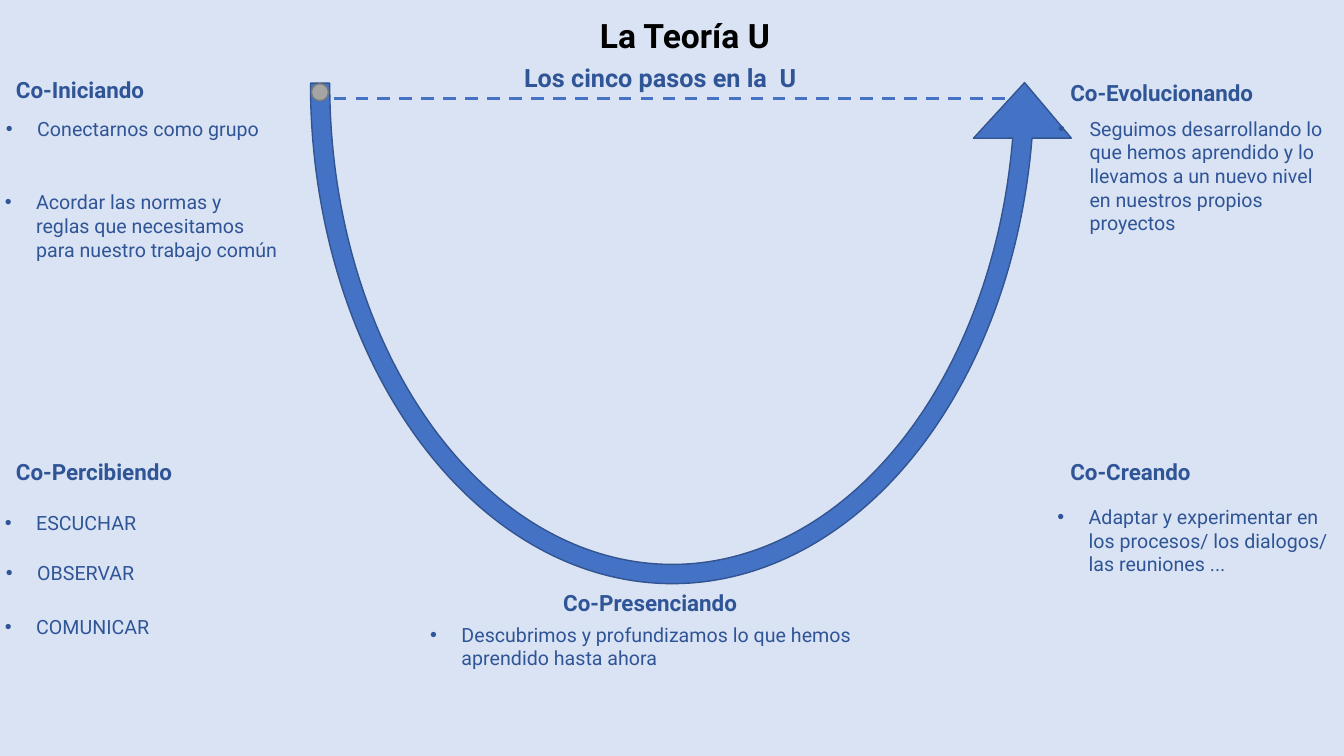
from dataclasses import dataclass

from lxml import etree
from pptx import Presentation
from pptx import util as u
from pptx.dml.color import RGBColor
from pptx.enum import dml, shapes, text
from pptx.oxml import ns

WIDTH, HEIGHT = 13.33, 7.5
FONT = "Roboto"
SKY, BLUE, NAVY, EDGE = "DAE3F3", "4472C4", "2F5597", "325491"
GREY, GREY_EDGE, BLACK = "A5A5A5", "7A7A7A", "000000"
INDENT = 2.33


@dataclass(frozen=True)
class Area:
    left: float
    top: float
    width: float
    height: float


@dataclass(frozen=True)
class Step:
    words: str
    area: Area


HEADINGS = [
    Step("Co-Iniciando", Area(0.45, 9.47, 17.18, 4.93)),
    Step("Co-Percibiendo", Area(0.45, 60, 19.5, 4.93)),
    Step("Co-Presenciando", Area(41.17, 77.33, 19.5, 4.93)),
    Step("Co-Creando", Area(78.9, 60, 14.4, 4.93)),
    Step("Co-Evolucionando", Area(78.9, 9.87, 19.8, 4.93)),
]

BULLETS = [
    Step("Conectarnos como grupo", Area(-0.3, 14.8, 21.83, 7.6)),
    Step("Acordar las normas y reglas que necesitamos para nuestro trabajo común",
         Area(-0.38, 24.53, 21.83, 17.07)),
    Step("ESCUCHAR", Area(-0.38, 66.93, 28.73, 4.53)),
    Step("COMUNICAR", Area(-0.38, 80.67, 26.55, 4.53)),
    Step("OBSERVAR", Area(-0.3, 73.6, 30.45, 4.53)),
    Step("Descubrimos y profundizamos lo que hemos aprendido hasta ahora",
         Area(31.27, 81.73, 37.5, 7.6)),
    Step("Adaptar y experimentar en los procesos/ los dialogos/ las reuniones ...",
         Area(77.93, 66.13, 21.83, 17.07)),
    Step("Seguimos desarrollando lo que hemos aprendido y lo llevamos a un nuevo "
         "nivel en nuestros propios proyectos", Area(78, 14.8, 21.83, 20.13)),
]


def across(share: float) -> u.Length:
    return u.Inches(WIDTH * share / 100)


def down(share: float) -> u.Length:
    return u.Inches(HEIGHT * share / 100)


def place(area: Area) -> tuple:
    return across(area.left), down(area.top), across(area.width), down(area.height)


def colour(code: str) -> RGBColor:
    return RGBColor.from_string(code)


def add_bullet(para) -> None:
    props = para._p.get_or_add_pPr()
    props.set("marL", str(across(INDENT)))
    props.set("indent", str(-across(INDENT)))
    etree.SubElement(props, ns.qn("a:buFont")).set("typeface", "Arial")
    etree.SubElement(props, ns.qn("a:buChar")).set("char", "•")


def add_text(page, words: str, area: Area, *, size: float, ink: str = NAVY,
             bold: bool = False, bullet: bool = False, centred: bool = False) -> None:
    box = page.shapes.add_textbox(*place(area))
    frame = box.text_frame
    frame.word_wrap = True
    frame.auto_size = text.MSO_AUTO_SIZE.SHAPE_TO_FIT_TEXT
    para = frame.paragraphs[0]
    if centred:
        para.alignment = text.PP_ALIGN.CENTER
    if bullet:
        add_bullet(para)
    span = para.add_run()
    span.text = words
    span.font.name = FONT
    span.font.size = u.Pt(size)
    span.font.bold = bold
    span.font.color.rgb = colour(ink)


def add_figure(page, kind, area: Area, *, fill: str, edge: str):
    figure = page.shapes.add_shape(kind, *place(area))
    figure.shadow.inherit = False
    figure.fill.solid()
    figure.fill.fore_color.rgb = colour(fill)
    figure.line.color.rgb = colour(edge)
    figure.line.width = u.Pt(1)
    return figure


def add_u_arrow(page) -> None:
    arrow = add_figure(page, shapes.MSO_SHAPE.CIRCULAR_ARROW,
                       Area(20.17, -60.4, 59.7, 142.8), fill=BLUE, edge=EDGE)
    thickness, head_width = 2.4 / 100, 6.1 / 100
    head, end, start = (degrees * 0.6 for degrees in (9.03, 351.07, 180))
    for index, value in enumerate((thickness, head, end, start, head_width)):
        arrow.adjustments[index] = value
    arrow.rotation = 180
    arrow.element.spPr.find(ns.qn("a:xfrm")).set("flipH", "1")


def add_dashed_line(page, left: float, right: float, level: float) -> None:
    line = page.shapes.add_connector(shapes.MSO_CONNECTOR.STRAIGHT, across(left),
                                     down(level), across(right), down(level))
    line.line.color.rgb = colour(BLUE)
    line.line.width = u.Pt(2.25)
    line.line.dash_style = dml.MSO_LINE.DASH
    etree.SubElement(line.element.spPr, ns.qn("a:effectLst"))


def main() -> None:
    deck = Presentation()
    deck.slide_width, deck.slide_height = across(100), down(100)
    page = deck.slides.add_slide(deck.slide_layouts[6])
    page.background.fill.solid()
    page.background.fill.fore_color.rgb = colour(SKY)

    add_u_arrow(page)
    for step in HEADINGS:
        add_text(page, step.words, step.area, size=16, bold=True)
    add_text(page, "Los cinco pasos en la  U", Area(38.25, 7.6, 25.35, 5.33),
             size=18, bold=True)
    add_text(page, "La Teoría U", Area(26.62, 1.33, 48.68, 6.67),
             size=24, ink=BLACK, bold=True, centred=True)
    for step in BULLETS:
        add_text(page, step.words, step.area, size=14, bullet=True)
    add_dashed_line(page, 24.82, 74.77, 13.07)
    add_figure(page, shapes.MSO_SHAPE.FLOWCHART_CONNECTOR,
               Area(23.17, 11.07, 1.27, 2.27), fill=GREY, edge=GREY_EDGE)
    deck.save("out.pptx")


if __name__ == "__main__":
    main()
